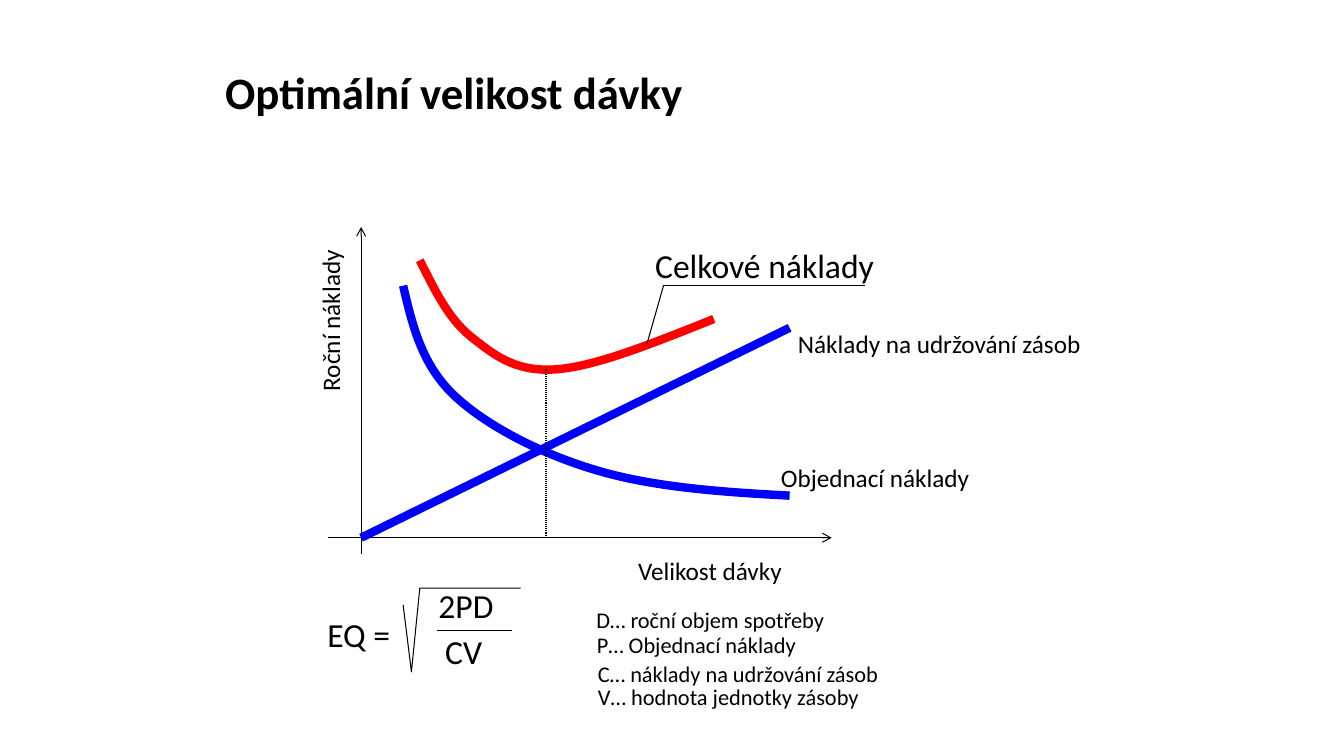
from dataclasses import dataclass

from pptx import Presentation
from pptx import util as u
from pptx.dml.color import RGBColor
from pptx.enum import dml, shapes, text
from pptx.oxml.ns import qn
from lxml import etree


@dataclass(frozen=True)
class Theme:
    font: str = "Calibri"
    ink: str = "000000"
    cost: str = "0000FF"
    total: str = "FF0000"
    title: int = 32
    large: int = 24
    medium: int = 18
    small: int = 16
    thin: float = 0.75
    thick: float = 6


THEME = Theme()
TITLE = "Optimální velikost dávky"

# All places are in centimetres.
ORIGIN_X, ORIGIN_Y = 9.1, 13.55
OPTIMUM_X = 13.76
CALLOUT_CORNER = (16.72, 7.2)

AXES = [
    ((ORIGIN_X, 13.97), (ORIGIN_X, 5.72)),
    ((8.26, ORIGIN_Y), (20.96, ORIGIN_Y)),
]
HOLDING_COST = ((ORIGIN_X, ORIGIN_Y), (19.9, 8.26))
# Bézier curves: a start, then two control points and an end per segment.
ORDERING_COST = [
    (10.16, 7.2),
    (10.39, 8.18), (10.62, 9.17), (11.43, 9.95),
    (12.24, 10.72), (13.61, 11.43), (15.03, 11.85),
    (16.43, 12.27), (18.16, 12.4), (19.9, 12.49),
]
TOTAL_COST = [
    (10.58, 6.56),
    (10.95, 7.29), (11.28, 8.0), (11.85, 8.47),
    (12.42, 8.92), (12.95, 9.37), (13.97, 9.31),
    (14.99, 9.25), (16.48, 8.64), (17.99, 8.04),
]
OPTIMUM = ((OPTIMUM_X, 9.31), (OPTIMUM_X, ORIGIN_Y))
CALLOUT = [(CALLOUT_CORNER, (16.3, 8.68)), (CALLOUT_CORNER, (21.8, 7.2))]
FRACTION_BAR = ((11.01, 15.88), (12.91, 15.88))
ROOT_SIGN = [(10.16, 15.24), (10.37, 16.93), (10.58, 14.82), (13.12, 14.82)]

# Wording, left, top, width, size, rotation
LABELS = [
    ("Velikost dávky", 15.83, 13.87, 4.17, THEME.medium, 0),
    ("Roční náklady", 6.27, 7.54, 4.11, THEME.medium, 270),
    ("Celkové náklady", 16.26, 6.05, 6.22, THEME.large, 0),
    ("Náklady na udržování zásob", 19.86, 8.15, 7.72, THEME.medium, 0),
    ("Objednací náklady", 19.43, 11.53, 5.31, THEME.medium, 0),
    ("EQ =", 8.0, 15.35, 2.31, THEME.large, 0),
    ("2PD", 10.8, 14.61, 1.91, THEME.large, 0),
    ("CV", 10.97, 15.77, 1.45, THEME.large, 0),
    ("D… roční objem spotřeby", 14.78, 15.14, 6.32, THEME.small, 0),
    ("P… Objednací náklady", 14.79, 15.77, 5.54, THEME.small, 0),
    ("C… náklady na udržování zásob", 14.82, 16.51, 7.65, THEME.small, 0),
    ("V… hodnota jednotky zásoby", 14.82, 17.09, 7.16, THEME.small, 0),
]
LABEL_HEIGHT = {THEME.large: 1.27, THEME.medium: 1.02, THEME.small: 0.94}


def write(frame, wording, *, size, bold=False, spacing=None):
    paragraph = frame.paragraphs[0]
    paragraph.alignment = text.PP_ALIGN.LEFT
    paragraph.line_spacing = spacing
    run = paragraph.add_run()
    run.text = wording
    run.font.name = THEME.font
    run.font.size = u.Pt(size)
    run.font.bold = bold
    run.font.color.rgb = RGBColor.from_string(THEME.ink)


def add_label(slide, wording, left, top, width, size, rotation):
    box = slide.shapes.add_textbox(
        u.Cm(left), u.Cm(top), u.Cm(width), u.Cm(LABEL_HEIGHT[size]))
    box.rotation = rotation
    box.text_frame.word_wrap = False
    box.text_frame.auto_size = text.MSO_AUTO_SIZE.SHAPE_TO_FIT_TEXT
    write(box.text_frame, wording, size=size)


def stroke(line, color, width):
    line.color.rgb = RGBColor.from_string(color)
    line.width = u.Pt(width)


def add_line(slide, start, end, color=THEME.ink, width=THEME.thin,
             dash=None, arrow=False):
    connector = slide.shapes.add_connector(
        shapes.MSO_CONNECTOR.STRAIGHT, *(u.Cm(v) for v in start + end))
    stroke(connector.line, color, width)
    if dash:
        connector.line.dash_style = dash
    properties = connector._element.spPr
    if arrow:
        outline = properties.find(qn("a:ln"))
        etree.SubElement(outline, qn("a:tailEnd"), type="arrow")
    etree.SubElement(properties, qn("a:effectLst"))


def add_outline(slide, points, color=THEME.ink, width=THEME.thin):
    start, *rest = [(u.Cm(x), u.Cm(y)) for x, y in points]
    builder = slide.shapes.build_freeform(*start)
    builder.add_line_segments(rest, close=False)
    outline = builder.convert_to_shape()
    outline.shadow.inherit = False
    outline.fill.background()
    stroke(outline.line, color, width)
    return outline


def add_curve(slide, points, color):
    """Draw an outline whose every three segments become one Bézier segment."""
    outline = add_outline(slide, points, color, THEME.thick)
    segments = list(outline._element.iter(qn("a:lnTo")))
    for first in range(0, len(segments), 3):
        bend, *others = segments[first:first + 3]
        curve = etree.Element(qn("a:cubicBezTo"))
        bend.addprevious(curve)
        for segment in (bend, *others):
            curve.append(segment[0])
            segment.getparent().remove(segment)


def main():
    deck = Presentation()
    deck.slide_width, deck.slide_height = u.Cm(33.87), u.Cm(19.05)
    slide = deck.slides.add_slide(deck.slide_layouts[5])

    title = slide.shapes.title
    title.left, title.top = u.Cm(5.42), u.Cm(0.81)
    title.width, title.height = u.Cm(22.86), u.Cm(3.18)
    title.text_frame.vertical_anchor = text.MSO_ANCHOR.MIDDLE
    write(title.text_frame, TITLE, size=THEME.title, bold=True, spacing=0.9)

    for axis in AXES:
        add_line(slide, *axis, arrow=True)
    add_line(slide, *HOLDING_COST, color=THEME.cost, width=THEME.thick)
    add_curve(slide, ORDERING_COST, THEME.cost)
    add_curve(slide, TOTAL_COST, THEME.total)
    add_line(slide, *OPTIMUM, dash=dml.MSO_LINE.ROUND_DOT)
    for leader in CALLOUT:
        add_line(slide, *leader)
    add_line(slide, *FRACTION_BAR)
    add_outline(slide, ROOT_SIGN)
    for label in LABELS:
        add_label(slide, *label)

    deck.save("out.pptx")


if __name__ == "__main__":
    main()
